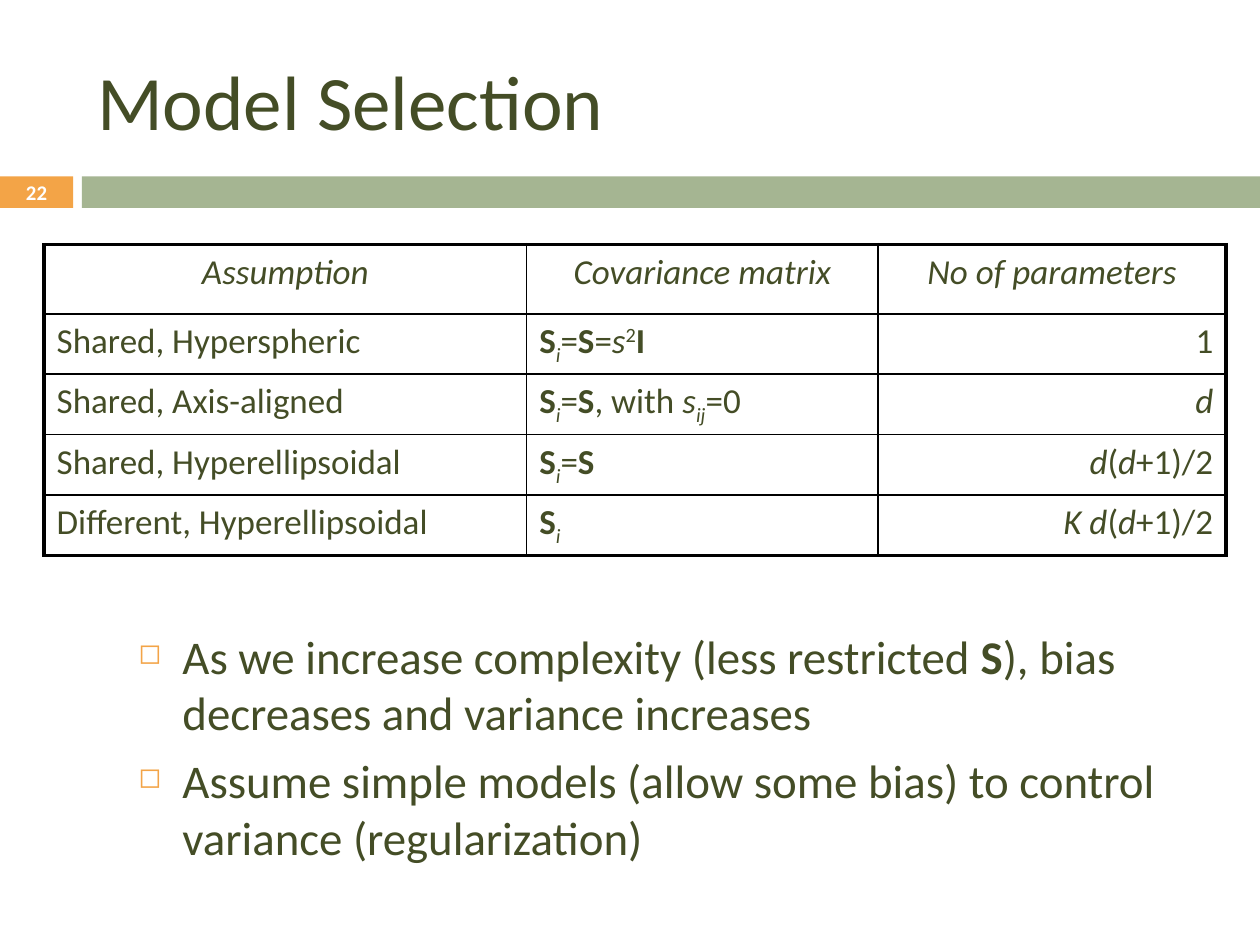
import pptx
import pptx.util
import pptx.dml.color
import pptx.enum.shapes
import pptx.enum.text
import pptx.oxml
import pptx.oxml.ns

Inches, Pt = pptx.util.Inches, pptx.util.Pt
ALIGN = pptx.enum.text.PP_ALIGN
MIDDLE = pptx.enum.text.MSO_ANCHOR.MIDDLE
FONT = "Calibri"
COLORS = {"text": "444D26", "accent": "F3A447", "band": "A5B592",
          "white": "FFFFFF", "border": "000000"}

# Content: a run is (text, flags); b bold, i italic, _ subscript, ^ superscript
TITLE = "Model Selection"
NUMBER = "22"
S_I = [("S", "b"), ("i", "i_")]
S_SHARED = S_I + [("=", ""), ("S", "b")]
D_TERM = [("(", ""), ("d", "i"), ("+1)/2", "")]
ROWS = [
    [[("Assumption", "i")], [("Covariance matrix", "i")], [("No of parameters", "i")]],
    [[("Shared, Hyperspheric", "")],
     S_SHARED + [("=", ""), ("s", "i"), ("2", "^"), ("I", "b")], [("1", "")]],
    [[("Shared, Axis-aligned", "")],
     S_SHARED + [(", with ", ""), ("s", "i"), ("ij", "i_"), ("=0", "")], [("d", "i")]],
    [[("Shared, Hyperellipsoidal", "")], S_SHARED, [("d", "i")] + D_TERM],
    [[("Different, Hyperellipsoidal", "")], S_I, [("K d", "i")] + D_TERM],
]
BULLETS = [
    [("As we increase complexity (less restricted ", ""), ("S", "b"),
     ("), bias decreases and variance increases", "")],
    [("Assume simple models (allow some bias) to control variance (regularization)", "")],
]

# Layout in inches
BAND_TOP, BAND_H, NUMBER_W, GAP = 1.4, 0.25, 0.58, 0.07
COLS = [3.83, 2.79, 2.76]
ROW_HEIGHTS = [0.55] + [0.48] * (len(ROWS) - 1)
COL_ALIGN = [ALIGN.LEFT, ALIGN.LEFT, ALIGN.RIGHT]


def rgb(name):
    return pptx.dml.color.RGBColor.from_string(COLORS[name])


def xml(tag, attrs="", inner=""):
    ns = pptx.oxml.ns.nsdecls("a")
    return pptx.oxml.parse_xml(f"<a:{tag} {ns} {attrs}>{inner}</a:{tag}>")


def write(p, runs, size, color="text", align=ALIGN.LEFT):
    p.alignment = align
    for text, flags in runs:
        r = p.add_run()
        r.text = text
        r.font.name, r.font.size = FONT, Pt(size)
        r.font.bold, r.font.italic = "b" in flags, "i" in flags
        r.font.color.rgb = rgb(color)
        for mark, baseline in (("_", "-25000"), ("^", "30000")):
            if mark in flags:
                r.font._element.set("baseline", baseline)


def add_bar(slide, left, width, color):
    sp = slide.shapes.add_shape(pptx.enum.shapes.MSO_SHAPE.RECTANGLE, Inches(left),
                                Inches(BAND_TOP), Inches(width), Inches(BAND_H))
    sp.shadow.inherit = False
    sp.fill.solid()
    sp.fill.fore_color.rgb = rgb(color)
    sp.line.fill.background()


def add_text(slide, left, top, width, height):
    tf = slide.shapes.add_textbox(Inches(left), Inches(top),
                                  Inches(width), Inches(height)).text_frame
    tf.word_wrap = True
    return tf


def set_borders(cell, row, col):
    outer = {"lnL": col == 0, "lnR": col == len(COLS) - 1,
             "lnT": row == 0, "lnB": row == len(ROWS) - 1}
    tc_pr = cell._tc.get_or_add_tcPr()
    for tag, is_outer in outer.items():
        width = Pt(2.25 if is_outer else 1)
        fill = f'<a:solidFill><a:srgbClr val="{COLORS["border"]}"/></a:solidFill>'
        tc_pr.append(xml(tag, f'w="{width}"', fill))


def add_grid(slide):
    frame = slide.shapes.add_table(len(ROWS), len(COLS), Inches(0.35), Inches(1.94),
                                   Inches(sum(COLS)), Inches(sum(ROW_HEIGHTS)))
    table = frame.table
    table.first_row = table.horz_banding = False
    for col, width in zip(table.columns, COLS):
        col.width = Inches(width)
    for i, (cells, height) in enumerate(zip(ROWS, ROW_HEIGHTS)):
        table.rows[i].height = Inches(height)
        for j, runs in enumerate(cells):
            cell = table.cell(i, j)
            set_borders(cell, i, j)
            cell.fill.background()
            p = cell.text_frame.paragraphs[0]
            write(p, runs, 20, align=COL_ALIGN[j] if i else ALIGN.CENTER)
            p._p.get_or_add_pPr().append(xml("spcBef", inner='<a:spcPct val="20000"/>'))


def add_bullets(slide):
    tf = add_text(slide, 1, 4.93, 9, 2)
    for i, runs in enumerate(BULLETS):
        p = tf.add_paragraph() if i else tf.paragraphs[0]
        write(p, runs, 26.8)
        p.space_before = Pt(7)
        p_pr = p._p.get_or_add_pPr()
        p_pr.set("marL", str(Inches(0.35)))
        p_pr.set("indent", str(Inches(-0.35)))
        p_pr.append(xml("buClr", inner=f'<a:srgbClr val="{COLORS["accent"]}"/>'))
        p_pr.append(xml("buSzPct", 'val="60000"'))
        p_pr.append(xml("buChar", 'char="◻"'))


def main():
    prs = pptx.Presentation()
    prs.slide_width, prs.slide_height = Inches(10), Inches(7.5)
    slide = prs.slides.add_slide(prs.slide_layouts[5])

    # Band across the slide
    add_bar(slide, 0, NUMBER_W, "accent")
    add_bar(slide, NUMBER_W + GAP, 10 - NUMBER_W - GAP, "band")

    # Title
    title = slide.shapes.title
    title.left, title.top = Inches(0.67), Inches(0.25)
    title.width, title.height = Inches(8.92), Inches(1.08)
    title.text_frame.vertical_anchor = MIDDLE
    write(title.text_frame.paragraphs[0], [(TITLE, "")], 44)

    # Slide number
    tf = add_text(slide, 0, 1.39, NUMBER_W, 0.27)
    tf.margin_top = tf.margin_bottom = 0
    tf.vertical_anchor = MIDDLE
    write(tf.paragraphs[0], [(NUMBER, "b")], 11.9, "white", ALIGN.CENTER)

    add_grid(slide)
    add_bullets(slide)
    prs.save("out.pptx")


if __name__ == "__main__":
    main()
